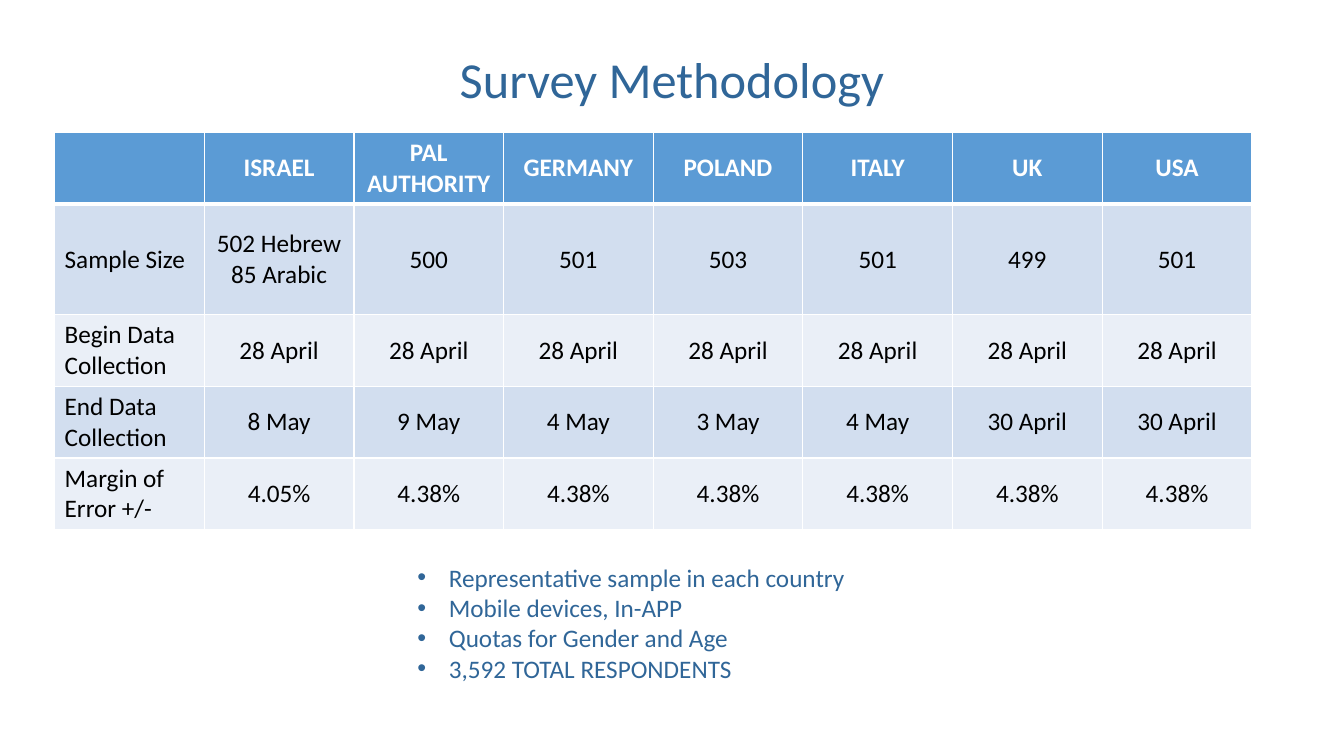
from pptx import Presentation
from pptx.dml.color import RGBColor
from pptx.enum.text import MSO_ANCHOR, MSO_AUTO_SIZE, PP_ALIGN
from pptx.oxml.ns import qn
from pptx.util import Pt
from lxml.etree import SubElement

TITLE_ONLY = 5
COUNTRIES = ["ISRAEL", "PAL AUTHORITY", "GERMANY", "POLAND", "ITALY", "UK", "USA"]
SURVEY_ROWS = [
    ["", *COUNTRIES],
    ["Sample Size", "502 Hebrew\n85 Arabic", "500", "501", "503", "501", "499", "501"],
    ["Begin Data Collection"] + ["28 April"] * len(COUNTRIES),
    ["End Data Collection", "8 May", "9 May", "4 May", "3 May", "4 May", "30 April", "30 April"],
    ["Margin of Error +/-", "4.05%"] + ["4.38%"] * (len(COUNTRIES) - 1),
]
ROW_HEIGHTS = [44.64, 79.2, 44.64, 44.64, 44.64]
SAMPLE_NOTES = [
    "Representative sample in each country",
    "Mobile devices, In-APP",
    "Quotas for Gender and Age",
    "3,592 TOTAL RESPONDENTS",
]


def rgb(hex_color):
    return RGBColor.from_string(hex_color)


class SurveySlide:
    font_name = "Calibri"
    accent = "306698"
    header_fill = "5B9BD5"
    band_fills = ["EAEFF7", "D2DEEF"]
    body_size = 18

    def __init__(self, deck):
        self.slide = deck.slides.add_slide(deck.slide_layouts[TITLE_ONLY])

    def style(self, paragraph, size, color, bold=False):
        for run in paragraph.runs:
            run.font.name = self.font_name
            run.font.size = Pt(size)
            run.font.bold = bold
            run.font.color.rgb = rgb(color)

    def title(self, wording, left, top, width, height):
        heading = self.slide.shapes.title
        heading.left, heading.top = Pt(left), Pt(top)
        heading.width, heading.height = Pt(width), Pt(height)
        frame = heading.text_frame
        frame.text = wording
        frame.vertical_anchor = MSO_ANCHOR.MIDDLE
        paragraph = frame.paragraphs[0]
        paragraph.alignment = PP_ALIGN.CENTER
        paragraph.line_spacing = 0.9
        self.style(paragraph, 36, self.accent)

    def border(self, cell, side, width):
        line = SubElement(cell._tc.get_or_add_tcPr(), qn(f"a:ln{side}"), w=str(Pt(width)))
        fill = SubElement(line, qn("a:solidFill"))
        SubElement(fill, qn("a:srgbClr"), val="FFFFFF")

    def cell(self, cell, wording, row, column):
        is_header = row == 0
        widths = {"L": 1, "R": 1, "T": 3 if row == 1 else 1, "B": 3 if is_header else 1}
        for side, width in widths.items():
            self.border(cell, side, width)
        cell.fill.solid()
        cell.fill.fore_color.rgb = rgb(self.header_fill if is_header else self.band_fills[row % 2])
        cell.vertical_anchor = MSO_ANCHOR.MIDDLE
        cell.text = wording
        for paragraph in cell.text_frame.paragraphs:
            paragraph.alignment = PP_ALIGN.CENTER if is_header or column else PP_ALIGN.LEFT
            self.style(paragraph, self.body_size, "FFFFFF" if is_header else "000000", is_header)

    def table(self, rows, row_heights, left, top, width, height):
        frame = self.slide.shapes.add_table(
            len(rows), len(rows[0]), Pt(left), Pt(top), Pt(width), Pt(height))
        survey = frame.table
        for row, wordings in enumerate(rows):
            survey.rows[row].height = Pt(row_heights[row])
            for column, wording in enumerate(wordings):
                self.cell(survey.cell(row, column), wording, row, column)
        frame.height = Pt(height)

    def bullets(self, wordings, left, top, width, height, indent):
        box = self.slide.shapes.add_textbox(Pt(left), Pt(top), Pt(width), Pt(height))
        frame = box.text_frame
        frame.word_wrap = False
        frame.auto_size = MSO_AUTO_SIZE.SHAPE_TO_FIT_TEXT
        frame.text = "\n".join(wordings)
        for paragraph in frame.paragraphs:
            properties = paragraph._p.get_or_add_pPr()
            properties.set("marL", str(Pt(indent)))
            properties.set("indent", str(-Pt(indent)))
            SubElement(properties, qn("a:buFont"), typeface="Arial")
            SubElement(properties, qn("a:buChar"), char="•")
            self.style(paragraph, self.body_size, self.accent)


def main():
    deck = Presentation()
    deck.slide_width, deck.slide_height = Pt(960), Pt(540)
    methodology = SurveySlide(deck)
    methodology.title("Survey Methodology", 66, 28.75, 828, 60)
    methodology.table(SURVEY_ROWS, ROW_HEIGHTS, 39, 94.5, 855.2, 280.8)
    methodology.bullets(SAMPLE_NOTES, 291, 398, 323, 94.5, 22.5)
    deck.save("out.pptx")


if __name__ == "__main__":
    main()
